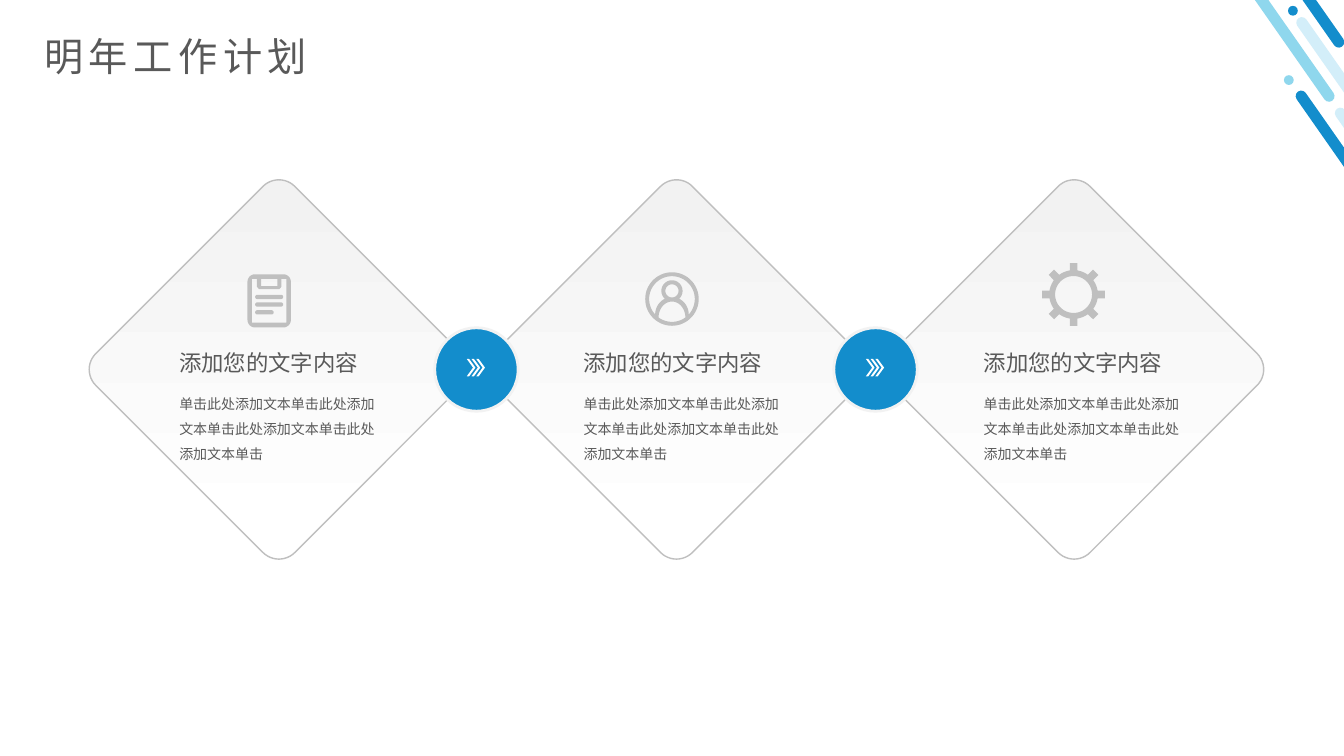
from math import cos, radians, sin

from lxml.etree import SubElement
from pptx import Presentation
from pptx.dml.color import RGBColor
from pptx.enum.shapes import MSO_SHAPE
from pptx.oxml.ns import qn
from pptx.util import Pt

FONT = "Noto Sans CJK SC"
BLUE, SKY, PALE = "138DCC", "8FD7ED", "D3EEF9"
GREY, TEXT, WHITE, LIGHT = "BFBFBF", "595959", "FFFFFF", "F2F2F2"

TITLE = "明年工作计划"
HEADING = "添加您的文字内容"
BODY = "单击此处添加文本单击此处添加文本单击此处添加文本单击此处添加文本单击"

# Centre x, centre y, length, colour
STRIPES = [
    (972.4, 130, 157.7, BLUE),
    (1000.4, 142.2, 157.7, PALE),
    (894.6, -9.4, 198.7, SKY),
    (984.6, 94.3, 198.7, PALE),
    (913.3, -31.3, 157.7, BLUE),
]
# Centre x, centre y, colour
DOTS = [(920.6, 57.2, SKY), (923.5, 7.7, BLUE)]
STRIPE_WIDTH, STRIPE_ANGLE, DOT_SIZE = 7.9, 325, 7

ROW_Y = 263.9
DIAMOND_SIDE, FIRST_DIAMOND, DIAMOND_STEP = 201, 199.2, 284
TEXT_LEFTS = [121, 409.8, 695.6]
CIRCLE_SIZE, CIRCLE_CENTRES = 59.6, [340.3, 625.4]
CHEVRON = [(0, 0), (1.7, 0), (6.2, 6.2), (1.7, 12.4), (0, 12.4), (4.5, 6.2)]
CHEVRON_STEP = 3.4


def color(value):
    return RGBColor.from_string(value)


def arc(x, y, radius_x, radius_y, start, end, steps=24):
    """Return points along an ellipse, angles in degrees, clockwise from the right."""
    angles = [radians(start + (end - start) * i / steps) for i in range(steps + 1)]
    return [(x + radius_x * cos(a), y + radius_y * sin(a)) for a in angles]


def circle(x, y, radius):
    return arc(x, y, radius, radius, 0, 360, 60)


def rounded_box(left, top, width, height, radius):
    right, bottom = left + width - radius, top + height - radius
    corners = [(right, bottom), (left + radius, bottom),
               (left + radius, top + radius), (right, top + radius)]
    return [point for i, (x, y) in enumerate(corners)
            for point in arc(x, y, radius, radius, 90 * i, 90 * i + 90, 8)]


def clipboard_outlines():
    page = [(3.2, 3.4), (6.8, 3.4), (6.8, 9), (8.3, 10.6), (22.7, 10.6), (24.2, 9),
            (24.2, 3.4), (27.8, 3.4), (27.8, 34.6), (3.2, 34.6)]
    clip = [(9.7, 3.4), (21.3, 3.4), (21.3, 8.4), (9.7, 8.4)]
    lines = [rounded_box(5.5, top, width, 3, 1.5)
             for top, width in [(14.7, 20), (20.1, 20), (25.7, 13.2)]]
    return [rounded_box(0, 0, 31, 38, 5.4), page, clip] + lines


def person_outlines():
    background = (arc(0, 0, 16.3, 16.3, 137, 403, 48)
                  + arc(0, 11.2, 12, 12.6, 0, -67)
                  + arc(0, -5.8, 7.6, 7.6, 49, -229)
                  + arc(0, 11.2, 12, 12.6, -113, -180))
    shoulders = arc(0, 0, 16.3, 16.3, 54, 126) + arc(0, 13.3, 9.6, 11.5, 180, 360)
    return [circle(0, 0, 19.1), background, shoulders, circle(0, -5.8, 4.7)]


def gear_outlines():
    tooth = [(17.2, -2.7), (22.4, -2.7), (22.4, 2.7)] + arc(0, 0, 17.4, 17.4, 9, 36, 6)
    rim = []
    for turn in range(0, 360, 45):
        c, s = cos(radians(turn)), sin(radians(turn))
        rim += [(x * c - y * s, x * s + y * c) for x, y in tooth]
    return [rim, circle(0, 0, 13.2)]


ICONS = [  # Outlines, origin x, origin y
    (clipboard_outlines(), 176.8, 195.9),
    (person_outlines(), 480, 213.6),
    (gear_outlines(), 766.9, 210.4),
]


def paint(shape, fill):
    shape.shadow.inherit = False
    shape.fill.solid()
    shape.fill.fore_color.rgb = color(fill)
    shape.line.fill.background()


def add_centred(slide, kind, x, y, width, height):
    shape = slide.shapes.add_shape(kind, Pt(x - width / 2), Pt(y - height / 2),
                                   Pt(width), Pt(height))
    shape.shadow.inherit = False
    return shape


def add_outlines(slide, outlines, x, y, fill):
    """Draw closed outlines as one shape; inner outlines become holes."""
    moved = [[(Pt(x + px), Pt(y + py)) for px, py in outline] for outline in outlines]
    builder = slide.shapes.build_freeform(*moved[0][0])
    builder.add_line_segments(moved[0][1:], close=True)
    for outline in moved[1:]:
        builder.move_to(*outline[0])
        builder.add_line_segments(outline[1:], close=True)
    paint(builder.convert_to_shape(), fill)


def add_text(slide, text, box, size, wrap=True):
    text_frame = slide.shapes.add_textbox(*map(Pt, box)).text_frame
    text_frame.word_wrap = wrap
    text_frame.text = text
    paragraph = text_frame.paragraphs[0]
    font = paragraph.runs[0].font
    font.size, font.name = Pt(size), FONT
    font.color.rgb = color(TEXT)
    properties = paragraph.runs[0].font._element
    SubElement(properties, qn("a:ea")).set("typeface", FONT)
    return paragraph, properties


def add_diamond(slide, x):
    diamond = add_centred(slide, MSO_SHAPE.ROUNDED_RECTANGLE, x, ROW_Y,
                          DIAMOND_SIDE, DIAMOND_SIDE)
    diamond.adjustments[0] = 0.08
    diamond.rotation = 45
    diamond.fill.gradient()
    diamond.fill.gradient_angle = 315
    stops = zip(diamond.fill.gradient_stops, [(0.03, LIGHT), (0.91, WHITE)])
    for stop, (position, value) in stops:
        stop.position = position
        stop.color.rgb = color(value)
    diamond.line.color.rgb = color(GREY)
    diamond.line.width = Pt(1)


def main():
    presentation = Presentation()
    presentation.slide_width, presentation.slide_height = Pt(960), Pt(540)
    slide = presentation.slides.add_slide(presentation.slide_layouts[6])

    for x, y, length, fill in STRIPES:
        stripe = add_centred(slide, MSO_SHAPE.ROUNDED_RECTANGLE, x, y, STRIPE_WIDTH, length)
        stripe.adjustments[0] = 0.5
        stripe.rotation = STRIPE_ANGLE
        paint(stripe, fill)
    for x, y, fill in DOTS:
        paint(add_centred(slide, MSO_SHAPE.OVAL, x, y, DOT_SIZE, DOT_SIZE), fill)

    _, title_properties = add_text(slide, TITLE, (24.5, 19.4, 937.4, 41), 28)
    title_properties.set("spc", "400")

    for i in range(len(TEXT_LEFTS)):
        add_diamond(slide, FIRST_DIAMOND + i * DIAMOND_STEP)

    for x in CIRCLE_CENTRES:
        disc = add_centred(slide, MSO_SHAPE.OVAL, x, ROW_Y, CIRCLE_SIZE, CIRCLE_SIZE)
        paint(disc, BLUE)
        disc.line.color.rgb = color(LIGHT)
        disc.line.width = Pt(2)
        for i in range(3):
            add_outlines(slide, [CHEVRON], x - 6.9 + i * CHEVRON_STEP, ROW_Y - 7.5, WHITE)

    for left, (outlines, x, y) in zip(TEXT_LEFTS, ICONS):
        paragraph, _ = add_text(slide, BODY, (left, 272.9, 156.2, 41.8), 10)
        paragraph.line_spacing = 1.5
        paragraph.space_before = Pt(13.3)
        add_text(slide, HEADING, (left, 246.2, 142.6, 26.6), 16, wrap=False)
        add_outlines(slide, outlines, x, y, GREY)

    presentation.save("out.pptx")


if __name__ == "__main__":
    main()
